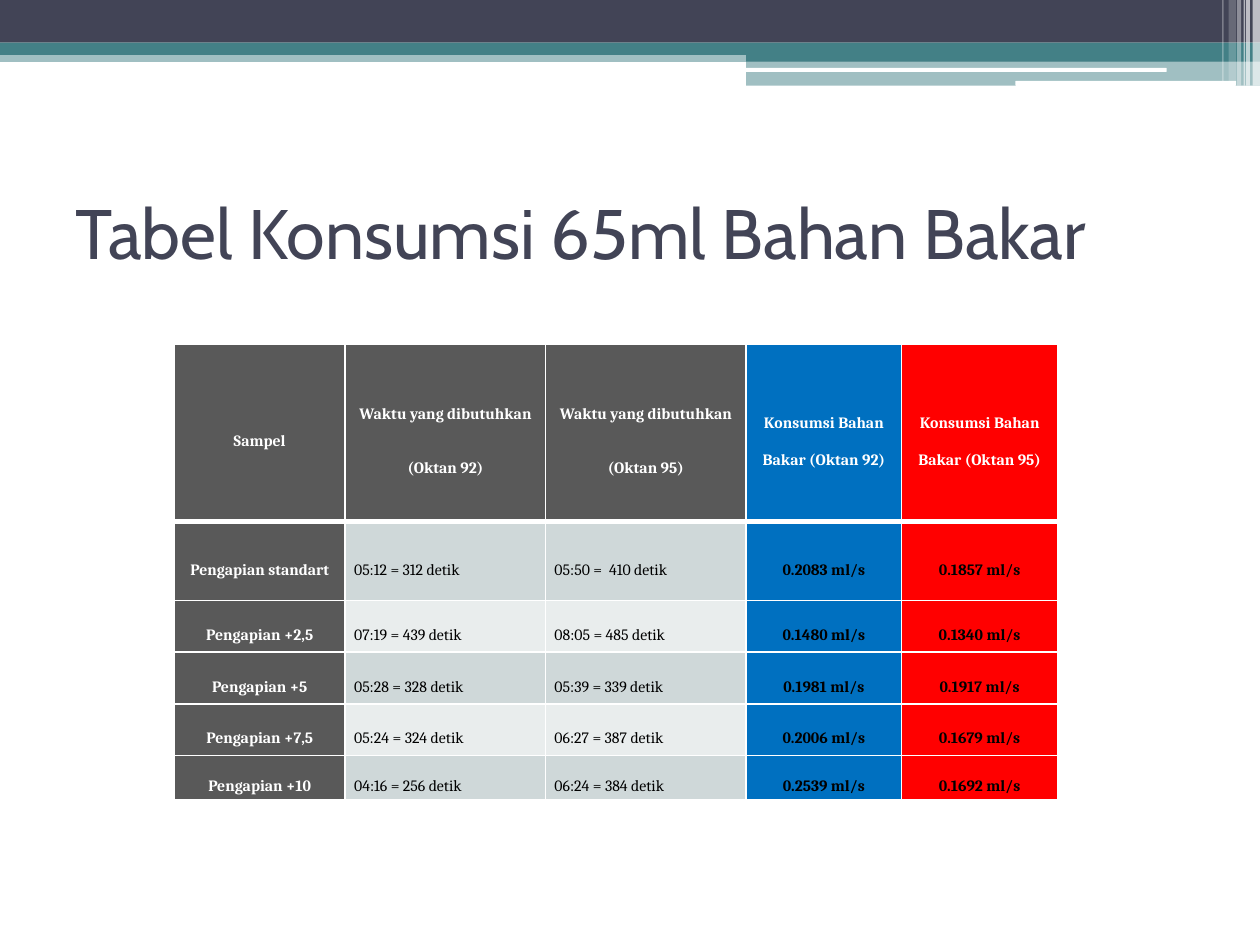
from collections import namedtuple

from lxml import etree
from pptx import Presentation
from pptx import util as u
from pptx.dml import color
from pptx.enum import shapes, text
from pptx.oxml import ns

Box = namedtuple("Box", "left top width height")

COLORS = {
    "navy": "424456", "teal": "438086", "white": "FFFFFF", "black": "000000",
    "gray": "595959", "blue": "0070C0", "red": "FF0000",
    "band_dark": "CFD8D9", "band_light": "E9EDED",
}
HEADERS = [
    ["Sampel"],
    ["Waktu yang dibutuhkan", "(Oktan 92)"],
    ["Waktu yang dibutuhkan", "(Oktan 95)"],
    ["Konsumsi Bahan Bakar (Oktan 92)"],
    ["Konsumsi Bahan Bakar (Oktan 95)"],
]
SAMPLES = [
    ("Pengapian standart", "05:12 = 312 detik", "05:50 =  410 detik", "0.2083 ml/s", "0.1857 ml/s"),
    ("Pengapian +2,5", "07:19 = 439 detik", "08:05 = 485 detik", "0.1480 ml/s", "0.1340 ml/s"),
    ("Pengapian +5", "05:28 = 328 detik", "05:39 = 339 detik", "0.1981 ml/s", "0.1917 ml/s"),
    ("Pengapian +7,5", "05:24 = 324 detik", "06:27 = 387 detik", "0.2006 ml/s", "0.1679 ml/s"),
    ("Pengapian +10", "04:16 = 256 detik", "06:24 = 384 detik", "0.2539 ml/s", "0.1692 ml/s"),
]
COLUMN_WIDTHS = [3.45, 4.04, 4.04, 3.14, 3.14]
ROW_HEIGHTS = [3.58, 1.6, 1.04, 1.04, 1.04, 0.89]
TIME_COLUMNS = (1, 2)


def rgb(name):
    return color.RGBColor.from_string(COLORS[name])


def apply_format(target, values):
    for name, value in values.items():
        setattr(target, name, value)


def add_span(para, wording, font_values, color_name):
    span = para.add_run()
    span.text = wording
    apply_format(span.font, font_values)
    span.font.color.rgb = rgb(color_name)


def add_bar(page, box, color_name, opacity=100, kind=shapes.MSO_SHAPE.RECTANGLE):
    bar = page.shapes.add_shape(kind, *map(u.Cm, box))
    bar.shadow.inherit = False
    bar.line.fill.background()
    bar.fill.solid()
    bar.fill.fore_color.rgb = rgb(color_name)
    if opacity < 100:
        tint = bar.fill._xPr.find(".//" + ns.qn("a:srgbClr"))
        etree.SubElement(tint, ns.qn("a:alpha"), val=str(opacity * 1000))


def add_banner(page, box):
    right = box.left + box.width
    tab = 10.36
    for top, height, width, name, opacity in [
        (1.02, 0.23, box.width, "teal", 50),
        (0, 0.86, box.width, "navy", 100),
        (0.86, 0.25, box.width, "teal", 100),
        (0.99, 0.25, tab, "teal", 100),
        (1.22, 0.51, tab, "teal", 50),
    ]:
        add_bar(page, Box(right - width, box.top + top, width, height), name, opacity)
    for offset, top, width, height in [(10.39, 1.37, 8.51, 0.08), (4.93, 1.63, 4.45, 0.1)]:
        add_bar(page, Box(right - offset, box.top + top, width, height), "white",
                kind=shapes.MSO_SHAPE.ROUNDED_RECTANGLE)
    for offset, width, height, opacity in [
        (0.15, 0.15, box.height, 65),
        (0.28, 0.08, box.height, 65),
        (0.33, 0.03, box.height, 60),
        (0.46, 0.08, box.height, 40),
        (0.63, 0.15, box.height - 0.1, 20),
        (0.76, 0.03, box.height - 0.1, 30),
    ]:
        add_bar(page, Box(right - offset, box.top, width, height), "white", opacity)


def add_title(page, box):
    frame = page.shapes.add_textbox(*map(u.Cm, box)).text_frame
    apply_format(frame, {"word_wrap": True, "vertical_anchor": text.MSO_ANCHOR.MIDDLE})
    add_span(frame.paragraphs[0], "Tabel Konsumsi 65ml Bahan Bakar",
             {"name": "Cabin", "size": u.Pt(40)}, "navy")


def add_borders(cell, widths):
    properties = cell._tc.get_or_add_tcPr()
    for side, width in widths.items():
        line = etree.SubElement(properties, ns.qn("a:ln" + side), w=str(u.Pt(width)))
        fill = etree.SubElement(line, ns.qn("a:solidFill"))
        etree.SubElement(fill, ns.qn("a:srgbClr"), val=COLORS["white"])


def fill_cell(cell, lines, row, column):
    is_header = row == 0
    is_time = not is_header and column in TIME_COLUMNS
    background = ["gray", "gray", "gray", "blue", "red"][column]
    if is_time:
        background = "band_dark" if row % 2 else "band_light"
    apply_format(cell, {
        "vertical_anchor": text.MSO_ANCHOR.MIDDLE,
        "margin_left": u.Cm(0.18), "margin_right": u.Cm(0.18),
        "margin_top": 0, "margin_bottom": 0,
    })
    add_borders(cell, {"L": 1, "R": 1, "T": 3 if row == 1 else 1, "B": 3 if is_header else 1})
    cell.fill.solid()
    cell.fill.fore_color.rgb = rgb(background)
    frame = cell.text_frame
    for index, wording in enumerate(lines):
        para = frame.add_paragraph() if index else frame.paragraphs[0]
        apply_format(para, {
            "alignment": text.PP_ALIGN.LEFT if is_time else text.PP_ALIGN.CENTER,
            "line_spacing": 2.0, "space_after": u.Pt(10),
        })
        add_span(para, wording, {"name": "Cambria", "size": u.Pt(9), "bold": not is_time},
                 "white" if is_header or column == 0 else "black")


def add_consumption_table(page, box):
    rows = [HEADERS] + [[[wording] for wording in sample] for sample in SAMPLES]
    table = page.shapes.add_table(len(rows), len(HEADERS), *map(u.Cm, box)).table
    apply_format(table, {"first_row": False, "horz_banding": False})
    for column, share in zip(table.columns, COLUMN_WIDTHS):
        column.width = u.Cm(box.width * share / sum(COLUMN_WIDTHS))
    for row, share in zip(table.rows, ROW_HEIGHTS):
        row.height = u.Cm(box.height * share / sum(ROW_HEIGHTS))
    for row, cells in enumerate(rows):
        for column, lines in enumerate(cells):
            fill_cell(table.cell(row, column), lines, row, column)


def main():
    deck = Presentation()
    apply_format(deck, {"slide_width": u.Cm(25.4), "slide_height": u.Cm(19.05)})
    page = deck.slides.add_slide(deck.slide_layouts[6])
    add_banner(page, Box(0, 0, 25.4, 1.73))
    add_title(page, Box(1.27, 3.18, 22.86, 2.97))
    add_consumption_table(page, Box(3.51, 6.93, 17.81, 9.19))
    deck.save("out.pptx")


if __name__ == "__main__":
    main()
